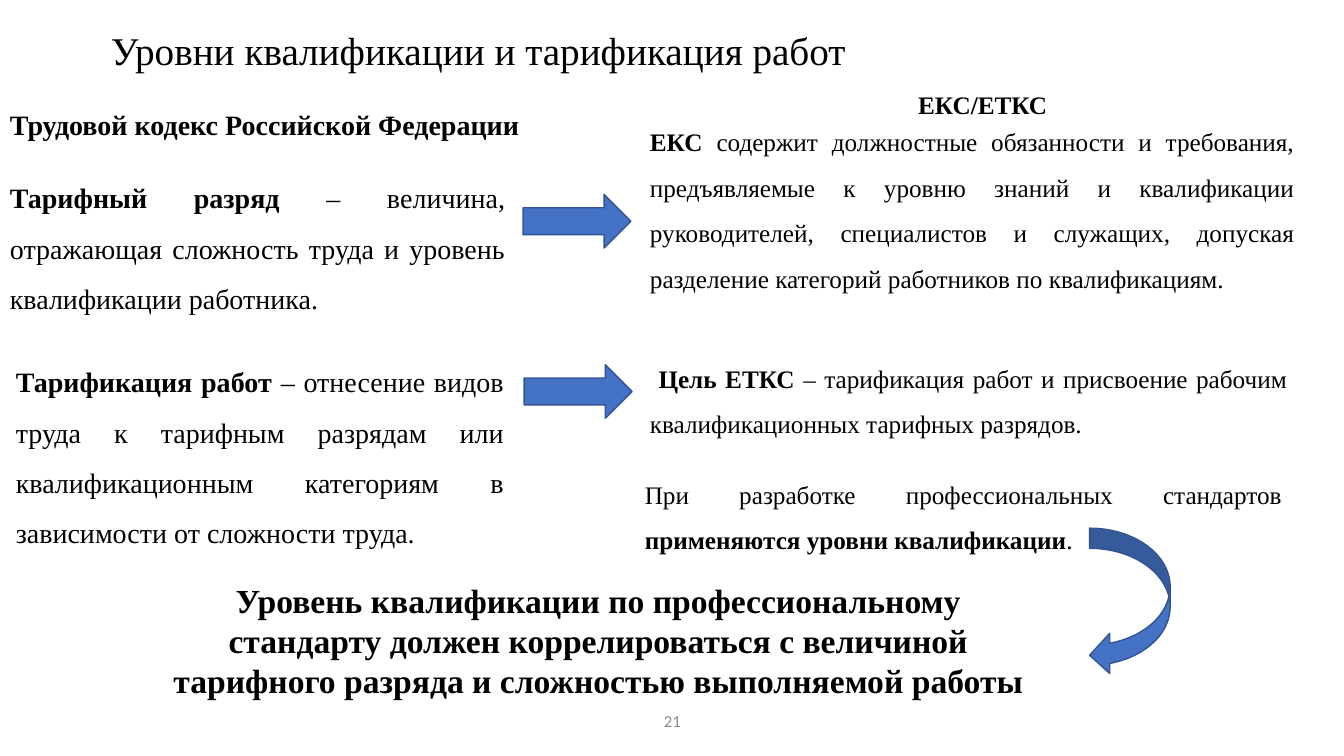
from lxml import etree
from pptx import Presentation
from pptx.dml.color import RGBColor
from pptx.enum import shapes, text
from pptx.util import Cm, Pt

COLORS = {"text": "000000", "number": "8C8C8C", "arrow": "4472C4", "outline": "325491"}
SERIF = "Times New Roman"
ALIGN = text.PP_ALIGN

TITLE = ("Уровни квалификации и тарификация работ", False)
TITLE_BOX = (2.54, 0.66, 26.21, 1.35)

# Left, top, width, height in cm; size; line spacing; alignment; (words, bold) runs
TEXTS = [
    ((0, 4.01, 12.98, 3.96), 20, 1.5, ALIGN.JUSTIFY, [
        ("Тарифный разряд", True),
        (" – величина, отражающая сложность труда и уровень квалификации работника. ", False)]),
    ((0.15, 8.64, 12.8, 5.26), 20, 1.5, ALIGN.JUSTIFY, [
        ("Тарификация работ", True),
        (" – отнесение видов труда к тарифным разрядам или квалификационным "
         "категориям в зависимости от сложности труда. ", False)]),
    ((16.13, 8.64, 16.56, 2.44), 18, 1.5, ALIGN.JUSTIFY, [
        (" ", False),
        ("Цель ЕТКС ", True),
        ("– тарификация работ и присвоение рабочим квалификационных тарифных разрядов. ", False)]),
    ((16, 11.56, 16.56, 2.44), 18, 1.5, ALIGN.JUSTIFY, [
        ("При разработке профессиональных стандартов ", False),
        ("применяются уровни квалификации", True),
        (". ", False)]),
    ((16.13, 2.69, 16.74, 4.72), 18, 1.5, ALIGN.JUSTIFY, [
        ("ЕКС", True),
        (" содержит должностные обязанности и требования, предъявляемые к уровню знаний "
         "и квалификации руководителей, специалистов и служащих, допуская разделение "
         "категорий работников по квалификациям.", False)]),
    ((22.02, 1.75, 5.49, 1.3), 18, 1.5, ALIGN.CENTER, [("ЕКС/ЕТКС", True)]),
    ((3.91, 14.48, 22.33, 3.33), 24, 1, ALIGN.CENTER, [
        ("Уровень квалификации по профессиональному стандарту должен коррелироваться "
         "с величиной тарифного разряда и сложностью выполняемой работы", True)]),
]
CODE_HEADING = ((0, 2.59, 13.36, 2.54), 20, 1, ALIGN.LEFT,
                [("Трудовой кодекс Российской Федерации", True)])
PAGE_NUMBER = ((11.23, 17.65, 11.43, 1.02), 12, 1, ALIGN.CENTER, [("21", False)])

ARROWS = [
    (shapes.MSO_SHAPE.RIGHT_ARROW, (13.18, 4.9, 2.72, 1.35)),
    (shapes.MSO_SHAPE.RIGHT_ARROW, (13.21, 9.19, 2.72, 1.35)),
    (shapes.MSO_SHAPE.CURVED_LEFT_ARROW, (27.46, 13.31, 2.03, 3.71)),
]


def color(name):
    return RGBColor.from_string(COLORS[name])


def lengths(box):
    return [Cm(value) for value in box]


def write(frame, runs, size, spacing, alignment, font=SERIF, ink="text"):
    paragraph = frame.paragraphs[0]
    paragraph.alignment = alignment
    paragraph.line_spacing = spacing
    for words, bold in runs:
        run = paragraph.add_run()
        run.text = words
        run.font.name = font
        run.font.size = Pt(size)
        run.font.bold = bold
        run.font.color.rgb = color(ink)


def add_text(slide, item, fit=True, wrap=True, **style):
    box, size, spacing, alignment, runs = item
    frame = slide.shapes.add_textbox(*lengths(box)).text_frame
    frame.word_wrap = wrap
    frame.auto_size = text.MSO_AUTO_SIZE.SHAPE_TO_FIT_TEXT if fit else text.MSO_AUTO_SIZE.NONE
    write(frame, runs, size, spacing, alignment, **style)
    return frame


def main():
    presentation = Presentation()
    presentation.slide_width, presentation.slide_height = Cm(33.87), Cm(19.05)
    slide = presentation.slides.add_slide(presentation.slide_layouts[5])

    # Title
    title = slide.shapes.title
    title.left, title.top, title.width, title.height = lengths(TITLE_BOX)
    title.text_frame.vertical_anchor = text.MSO_ANCHOR.MIDDLE
    title.text_frame.auto_size = text.MSO_AUTO_SIZE.SHAPE_TO_FIT_TEXT
    write(title.text_frame, [TITLE], 28, 0.9, ALIGN.LEFT)

    # Definitions and conclusion
    add_text(slide, CODE_HEADING, fit=False, wrap=False)
    for item in TEXTS:
        add_text(slide, item)

    # Arrows
    for kind, box in ARROWS:
        arrow = slide.shapes.add_shape(kind, *lengths(box))
        arrow.shadow.inherit = False
        arrow.fill.solid()
        arrow.fill.fore_color.rgb = color("arrow")
        arrow.line.color.rgb = color("outline")
        arrow.line.width = Pt(1)

    # Page number
    number = add_text(slide, PAGE_NUMBER, fit=False, font="Calibri", ink="number")
    number.vertical_anchor = text.MSO_ANCHOR.MIDDLE

    presentation.save("out.pptx")


if __name__ == "__main__":
    main()
